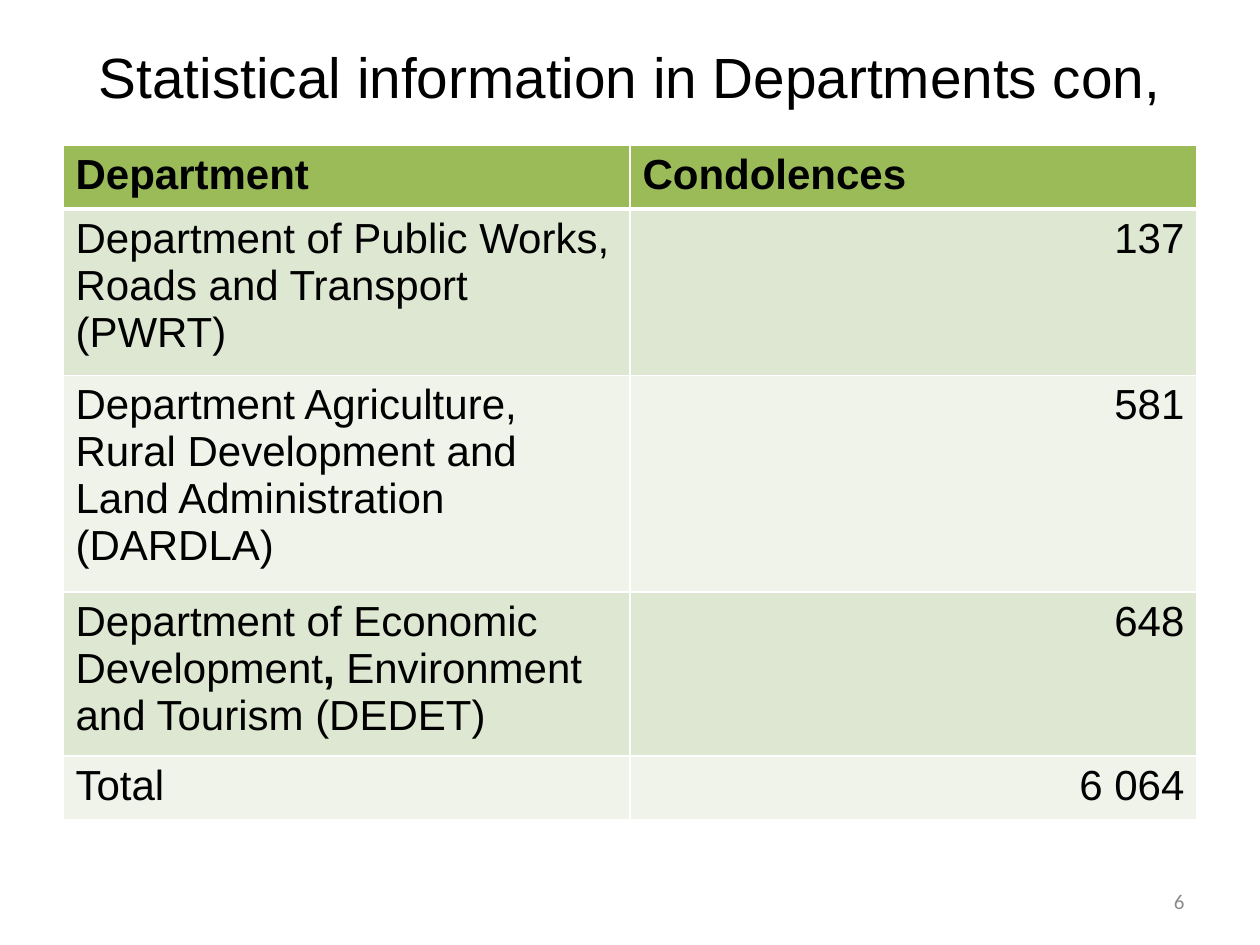
from lxml.etree import SubElement
from pptx import Presentation
from pptx.dml.color import RGBColor
from pptx.enum.text import MSO_ANCHOR, PP_ALIGN
from pptx.oxml.ns import qn
from pptx.util import Inches, Pt

BLACK = RGBColor(0x00, 0x00, 0x00)
GREY = RGBColor(0x8C, 0x8C, 0x8C)
WHITE = RGBColor(0xFF, 0xFF, 0xFF)
GREEN = RGBColor(0x9B, 0xBB, 0x59)
BANDS = [RGBColor(0xDE, 0xE7, 0xD1), RGBColor(0xEF, 0xF3, 0xEA)]

MARGIN = Inches(0.5)
ROW_HEIGHTS = [0.51, 1.32, 1.72, 1.21, 0.51]
ROWS = [
    ("Department", "Condolences"),
    ("Department of Public Works, Roads and Transport (PWRT)", "137"),
    ("Department Agriculture, Rural Development and Land Administration (DARDLA)", "581"),
    ("Department of Economic Development|, |Environment and Tourism (DEDET)", "648"),
    ("Total", "6 064"),
]


def write(frame, text, size=24, font="Arial", color=BLACK, bold=False, align=PP_ALIGN.LEFT):
    """Fill the frame; each | in the text switches bold on or off."""
    frame.word_wrap = True
    paragraph = frame.paragraphs[0]
    paragraph.alignment = align
    for i, part in enumerate(text.split("|")):
        run = paragraph.add_run()
        run.text = part
        run.font.size = Pt(size)
        run.font.name = font
        run.font.color.rgb = color
        run.font.bold = bold != (i % 2 == 1)


def add_border(cell, side, points):
    line = SubElement(cell._tc.get_or_add_tcPr(), qn(f"a:ln{side}"), w=str(Pt(points)))
    fill = SubElement(line, qn("a:solidFill"))
    SubElement(fill, qn("a:srgbClr"), val=str(WHITE))


prs = Presentation()
prs.slide_width, prs.slide_height = Inches(10), Inches(7.5)
content_width = prs.slide_width - 2 * MARGIN
slide = prs.slides.add_slide(prs.slide_layouts[6])

# Title
title = slide.shapes.add_textbox(MARGIN, Inches(0.3), content_width, Inches(0.61)).text_frame
title.vertical_anchor = MSO_ANCHOR.MIDDLE
write(title, "Statistical information in Departments con,", size=32.4, align=PP_ALIGN.CENTER)

# Condolences per department
condolences = slide.shapes.add_table(
    len(ROWS), 2, MARGIN, Inches(1.15), content_width, Inches(sum(ROW_HEIGHTS))
).table
for r, (values, height) in enumerate(zip(ROWS, ROW_HEIGHTS)):
    is_header = r == 0
    condolences.rows[r].height = Inches(height)
    for c, value in enumerate(values):
        cell = condolences.cell(r, c)
        is_count = c == 1 and not is_header
        write(cell.text_frame, value, bold=is_header,
              align=PP_ALIGN.RIGHT if is_count else PP_ALIGN.LEFT)
        # Borders come before the fill in the cell properties
        for side in "LRTB":
            below_header = (is_header and side == "B") or (r == 1 and side == "T")
            add_border(cell, side, 3 if below_header else 1)
        cell.fill.solid()
        cell.fill.fore_color.rgb = GREEN if is_header else BANDS[(r - 1) % 2]

# Slide number
number_width = Inches(2.33)
number = slide.shapes.add_textbox(
    prs.slide_width - MARGIN - number_width, Inches(6.95), number_width, Inches(0.4)
).text_frame
number.vertical_anchor = MSO_ANCHOR.MIDDLE
write(number, "6", size=12, font="Calibri", color=GREY, align=PP_ALIGN.RIGHT)

prs.save("out.pptx")
